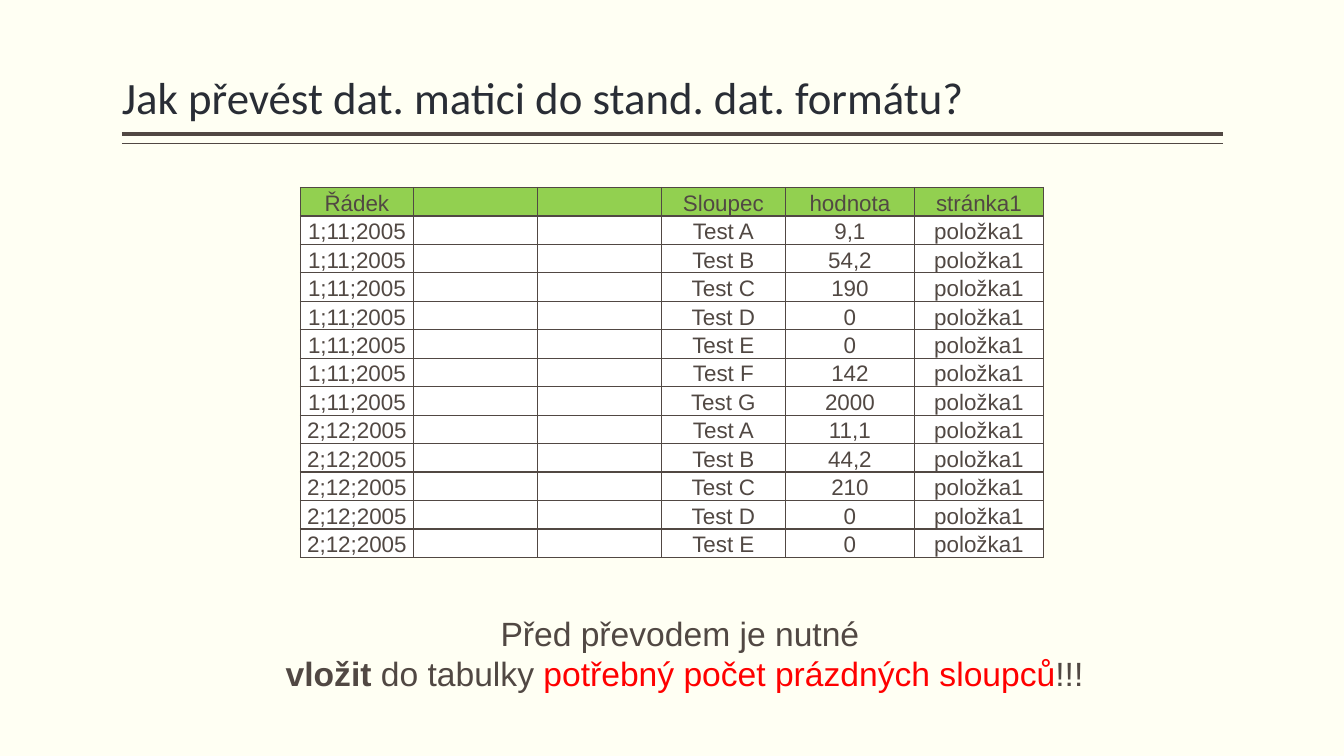
from lxml.etree import SubElement
from pptx import Presentation
from pptx.dml.color import RGBColor
from pptx.enum.shapes import MSO_CONNECTOR
from pptx.enum.text import MSO_ANCHOR, MSO_AUTO_SIZE, PP_ALIGN
from pptx.oxml import parse_xml
from pptx.oxml.ns import nsdecls, qn
from pptx.util import Inches, Pt

STRAIGHT = MSO_CONNECTOR.STRAIGHT
BOTTOM = MSO_ANCHOR.BOTTOM
NO_AUTOFIT = MSO_AUTO_SIZE.NONE
LEFT, CENTER = PP_ALIGN.LEFT, PP_ALIGN.CENTER

IVORY = RGBColor(0xFF, 0xFF, 0xF3)
BROWN = RGBColor(0x51, 0x48, 0x43)
NAVY = RGBColor(0x29, 0x2D, 0x35)
GREEN = RGBColor(0x92, 0xD0, 0x50)
WHITE = RGBColor(0xFF, 0xFF, 0xFF)
RED = RGBColor(0xFF, 0x00, 0x00)

UNIT = Inches(0.1)
MARGIN, CONTENT_WIDTH = 12.1, 109.2
TITLE_ONLY = 5

HEADER = ["Řádek", "", "", "Sloupec", "hodnota", "stránka1"]
MEASUREMENTS = {
    "1;11;2005": ["9,1", "54,2", "190", "0", "0", "142", "2000"],
    "2;12;2005": ["11,1", "44,2", "210", "0", "0"],
}
COLUMN_WIDTHS = [11.2, 12.3, 12.3, 12.3, 12.8, 12.8]


def grid(*lengths):
    return [round(length * UNIT) for length in lengths]


def write(paragraph, text, size=16, font="Arial", color=BROWN, bold=False, align=CENTER):
    paragraph.alignment = align
    if not text:
        SubElement(paragraph._p, qn("a:endParaRPr"), sz=str(size * 100))
        return
    run = paragraph.add_run()
    run.text = text
    run.font.size, run.font.name, run.font.bold = Pt(size), font, bold
    run.font.color.rgb = color


class SlideBuilder:
    """Holds the slide and its style, and adds each kind of element on a grid."""

    def __init__(self, deck):
        self.slide = deck.slides.add_slide(deck.slide_layouts[TITLE_ONLY])
        self.slide.background.fill.solid()
        self.slide.background.fill.fore_color.rgb = IVORY
        self.line_color = BROWN

    def title(self, text, left, top, width, height):
        heading = self.slide.shapes.title
        heading.left, heading.top, heading.width, heading.height = grid(left, top, width, height)
        frame = heading.text_frame
        frame.auto_size, frame.word_wrap = NO_AUTOFIT, True
        frame.vertical_anchor = BOTTOM
        frame.margin_left = frame.margin_right = 0
        frame.paragraphs[0].line_spacing = 0.9
        write(frame.paragraphs[0], text, size=32, font="Calibri", color=NAVY, align=LEFT)

    def rule(self, left, top, width, weight):
        rule = self.slide.shapes.add_connector(STRAIGHT, *grid(left, top, left + width, top))
        rule.line.color.rgb, rule.line.width = self.line_color, Pt(weight)
        SubElement(rule._element.spPr, qn("a:effectLst"))

    def border(self, cell):
        properties = cell._tc.get_or_add_tcPr()
        for position, side in enumerate("LRTB"):
            properties.insert(position, parse_xml(
                f'<a:ln{side} {nsdecls("a")} w="{Pt(1)}"><a:solidFill>'
                f'<a:srgbClr val="{self.line_color}"/></a:solidFill></a:ln{side}>'))

    def table(self, records, left, top, widths, height):
        table = self.slide.shapes.add_table(
            len(records), len(widths), *grid(left, top, sum(widths), height)).table
        table.first_row = table.horz_banding = False
        for column, width in zip(table.columns, grid(*widths)):
            column.width = width
        for index, (row, record) in enumerate(zip(table.rows, records)):
            for cell, text in zip(row.cells, record):
                cell.fill.solid()
                cell.fill.fore_color.rgb = WHITE if index else GREEN
                cell.vertical_anchor = BOTTOM
                cell.margin_left = cell.margin_right = cell.margin_top = Inches(0.01)
                cell.margin_bottom = 0
                write(cell.text_frame.paragraphs[0], text)
                self.border(cell)

    def note(self, lines, left, top, width, height):
        frame = self.slide.shapes.add_textbox(*grid(left, top, width, height)).text_frame
        frame.word_wrap = True
        for index, line in enumerate(lines):
            paragraph = frame.add_paragraph() if index else frame.paragraphs[0]
            for text, style in line:
                write(paragraph, text, size=24, **style)


def main():
    deck = Presentation()
    deck.slide_width, deck.slide_height = Inches(13.33), Inches(7.5)
    builder = SlideBuilder(deck)
    builder.rule(MARGIN, 13.3, CONTENT_WIDTH, weight=3)
    builder.rule(MARGIN, 14.25, CONTENT_WIDTH, weight=1)
    builder.title("Jak převést dat. matici do stand. dat. formátu?",
                  MARGIN, 0.8, CONTENT_WIDTH, 12)
    records = [[date, "", "", f"Test {letter}", value, "položka1"]
               for date, values in MEASUREMENTS.items()
               for letter, value in zip("ABCDEFG", values)]
    builder.table([HEADER, *records], 29.8, 18.6, COLUMN_WIDTHS, 36.7)
    builder.note([
        [("Před převodem je nutné ", {})],
        [("vložit", {"bold": True}), (" do tabulky ", {}),
         ("potřebný počet prázdných sloupců", {"color": RED}), ("!!!", {})],
    ], 22.6, 60.3, 90.6, 9.1)
    deck.save("out.pptx")


if __name__ == "__main__":
    main()
